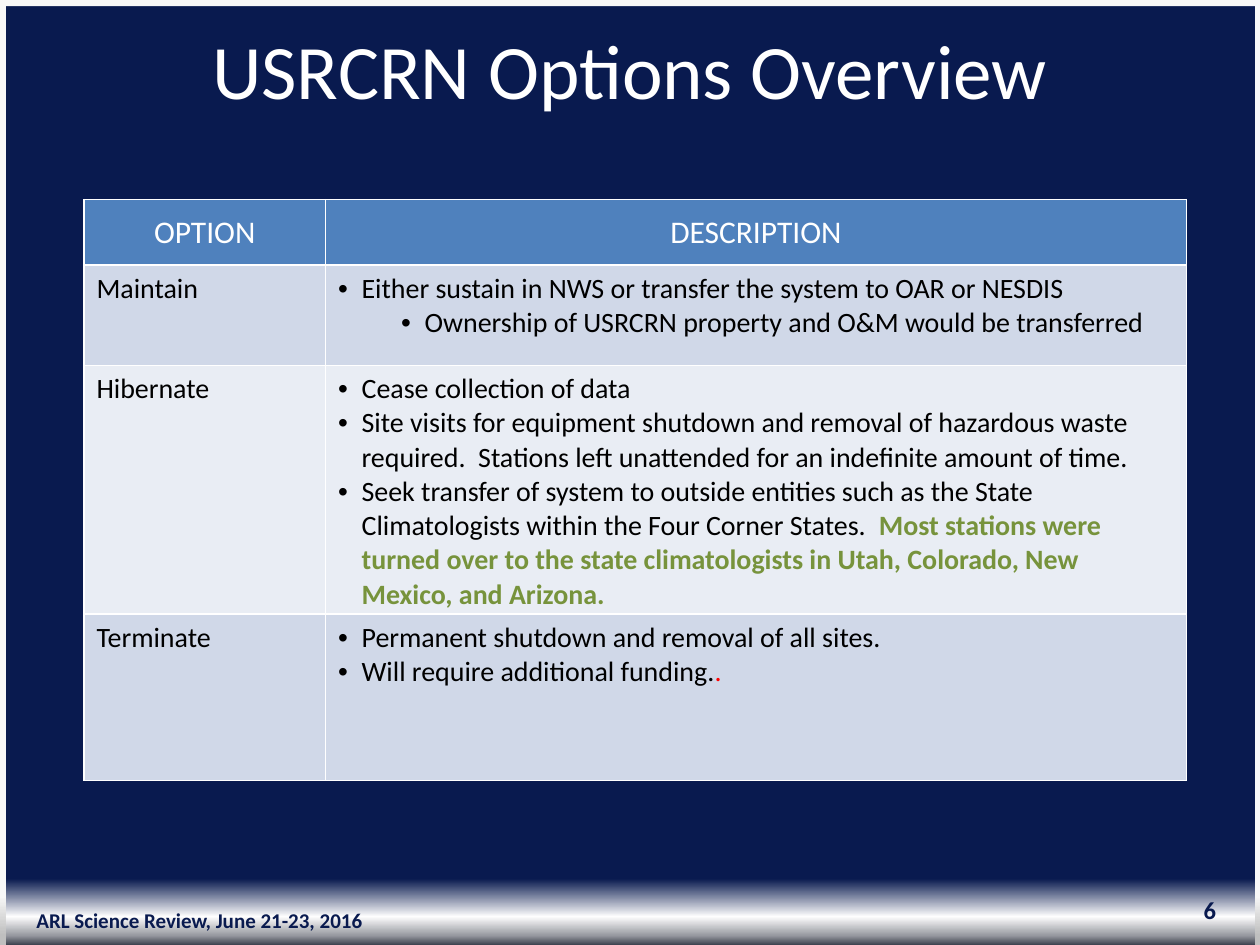
from lxml.etree import SubElement
from pptx import Presentation
from pptx.dml.color import RGBColor
from pptx.enum.shapes import MSO_SHAPE as SHAPE
from pptx.enum.text import MSO_ANCHOR as ANCHOR, PP_ALIGN as ALIGN
from pptx.oxml.ns import qn
from pptx.util import Pt

NAVY = RGBColor(0x09, 0x1A, 0x4F)
WHITE = RGBColor(0xFF, 0xFF, 0xFF)
BLACK = RGBColor(0, 0, 0)
EDGE = RGBColor(0xF8, 0xF8, 0xF8)
HEADER_BLUE = RGBColor(0x4F, 0x81, 0xBD)
BAND_DARK = RGBColor(0xD0, 0xD8, 0xE8)
BAND_LIGHT = RGBColor(0xE9, 0xED, 0xF4)
GREEN = RGBColor(0x77, 0x93, 0x3C)
RED = RGBColor(0xFF, 0, 0)

BACKDROP = [(93, NAVY), (97, RGBColor(0xFE, 0xFE, 0xFE)),
            (99, RGBColor(0x97, 0x99, 0xA0)), (100, RGBColor(0x3C, 0x41, 0x4E))]
SIDE_FADE = [(0, EDGE), (95, RGBColor(0xF5, 0xF5, 0xF5)),
             (99, RGBColor(0xBF, 0xBF, 0xBF))]

OPTIONS = [
    ("Maintain", [
        (1, [("Either sustain in NWS or transfer the system to OAR or NESDIS", {})]),
        (2, [("Ownership of USRCRN property and O&M would be transferred", {})]),
    ]),
    ("Hibernate", [
        (0, [("Cease collection of data", {})]),
        (0, [("Site visits for equipment shutdown and removal of hazardous waste "
              "required.  Stations left unattended for an indefinite amount of time.", {})]),
        (0, [("Seek transfer of system to outside entities such as the State "
              "Climatologists within the Four Corner States.  ", {}),
             ("Most stations were turned over to the state climatologists in Utah, "
              "Colorado, New Mexico, and Arizona.", {"color": GREEN, "bold": True})]),
    ]),
    ("Terminate", [
        (1, [("Permanent shutdown and removal of all sites.", {})]),
        (1, [("Will require additional funding.", {}), (".", {"color": RED})]),
    ]),
]
COLUMN_WIDTHS = [138, 492]
ROW_HEIGHTS = [37.5, 57.5, 142, 95]


def add_text(paragraph, text, size=16, color=BLACK, bold=False, align=None):
    run = paragraph.add_run()
    run.text = text
    run.font.name = "Calibri"
    run.font.size = Pt(size)
    run.font.bold = bold
    run.font.color.rgb = color
    if align is not None:
        paragraph.alignment = align


def set_gradient(fill, element, stops):
    fill.gradient()
    fill.gradient_angle = 270
    stop_list = element.find(".//" + qn("a:gsLst"))
    for stop in list(stop_list):
        stop_list.remove(stop)
    for percent, color in stops:
        stop = SubElement(stop_list, qn("a:gs"), pos=str(percent * 1000))
        SubElement(stop, qn("a:srgbClr"), val=str(color))


def add_edge(slide, left, width, height, stops=None):
    edge = slide.shapes.add_shape(SHAPE.RECTANGLE, Pt(left), 0, Pt(width), Pt(height))
    edge.shadow.inherit = False
    edge.line.fill.background()
    if stops:
        set_gradient(edge.fill, edge.element, stops)
    else:
        edge.fill.solid()
        edge.fill.fore_color.rgb = EDGE


def add_footer(slide, text, left, top, width, size, align):
    footer = slide.shapes.add_textbox(Pt(left), Pt(top), Pt(width), Pt(29))
    frame = footer.text_frame
    frame.word_wrap = True
    frame.vertical_anchor = ANCHOR.MIDDLE
    add_text(frame.paragraphs[0], text, size=size, color=NAVY, bold=True, align=align)


def add_title(slide, text):
    title = slide.shapes.title
    title.left, title.top, title.width, title.height = Pt(6), Pt(9.5), Pt(708), Pt(60.5)
    title.text_frame.vertical_anchor = ANCHOR.TOP
    add_text(title.text_frame.paragraphs[0], text, size=44, color=WHITE,
             align=ALIGN.CENTER)


def style_cell(cell, color):
    properties = cell._tc.get_or_add_tcPr()
    for side in ("a:lnL", "a:lnR", "a:lnT", "a:lnB"):
        border = SubElement(properties, qn(side), w=str(Pt(1)))
        SubElement(SubElement(border, qn("a:solidFill")), qn("a:srgbClr"), val=str(WHITE))
    cell.fill.solid()
    cell.fill.fore_color.rgb = color


def add_bullet(paragraph, level):
    paragraph.level = level
    properties = paragraph._p.get_or_add_pPr()
    properties.set("marL", str(Pt(49.5 if level == 2 else 13.5)))
    properties.set("indent", str(Pt(-13.5)))
    SubElement(properties, qn("a:buFont"), typeface="Arial")
    SubElement(properties, qn("a:buChar"), char="•")


def fill_description(cell, bullets):
    frame = cell.text_frame
    for index, (level, runs) in enumerate(bullets):
        paragraph = frame.add_paragraph() if index else frame.paragraphs[0]
        add_bullet(paragraph, level)
        for text, style in runs:
            add_text(paragraph, text, **style)


def add_options_table(slide):
    table = slide.shapes.add_table(
        len(ROW_HEIGHTS), len(COLUMN_WIDTHS), Pt(48), Pt(114),
        Pt(sum(COLUMN_WIDTHS)), Pt(sum(ROW_HEIGHTS))).table
    for column, width in zip(table.columns, COLUMN_WIDTHS):
        column.width = Pt(width)
    for row, height in zip(table.rows, ROW_HEIGHTS):
        row.height = Pt(height)
    for cell, heading in zip(table.rows[0].cells, ("OPTION", "DESCRIPTION")):
        style_cell(cell, HEADER_BLUE)
        cell.vertical_anchor = ANCHOR.MIDDLE
        add_text(cell.text_frame.paragraphs[0], heading, size=18, color=WHITE,
                 align=ALIGN.CENTER)
    for index, (option, bullets) in enumerate(OPTIONS, start=1):
        option_cell, description_cell = table.rows[index].cells
        for cell in (option_cell, description_cell):
            style_cell(cell, BAND_DARK if index % 2 else BAND_LIGHT)
        add_text(option_cell.text_frame.paragraphs[0], option)
        fill_description(description_cell, bullets)


def main():
    deck = Presentation()
    deck.slide_width, deck.slide_height = Pt(720), Pt(540)
    slide = deck.slides.add_slide(deck.slide_layouts[5])
    set_gradient(slide.background.fill, slide.element, BACKDROP)
    add_edge(slide, 0, 3.5, 540, SIDE_FADE)
    add_edge(slide, 1.5, 718.5, 3.5)
    add_edge(slide, 717, 3.5, 540, SIDE_FADE)
    add_footer(slide, "ARL Science Review, June 21-23, 2016", 0, 511.5, 228, 12,
               ALIGN.CENTER)
    add_footer(slide, "6", 534, 505.5, 168, 14, ALIGN.RIGHT)
    add_title(slide, "USRCRN Options Overview")
    add_options_table(slide)
    deck.save("out.pptx")


if __name__ == "__main__":
    main()
